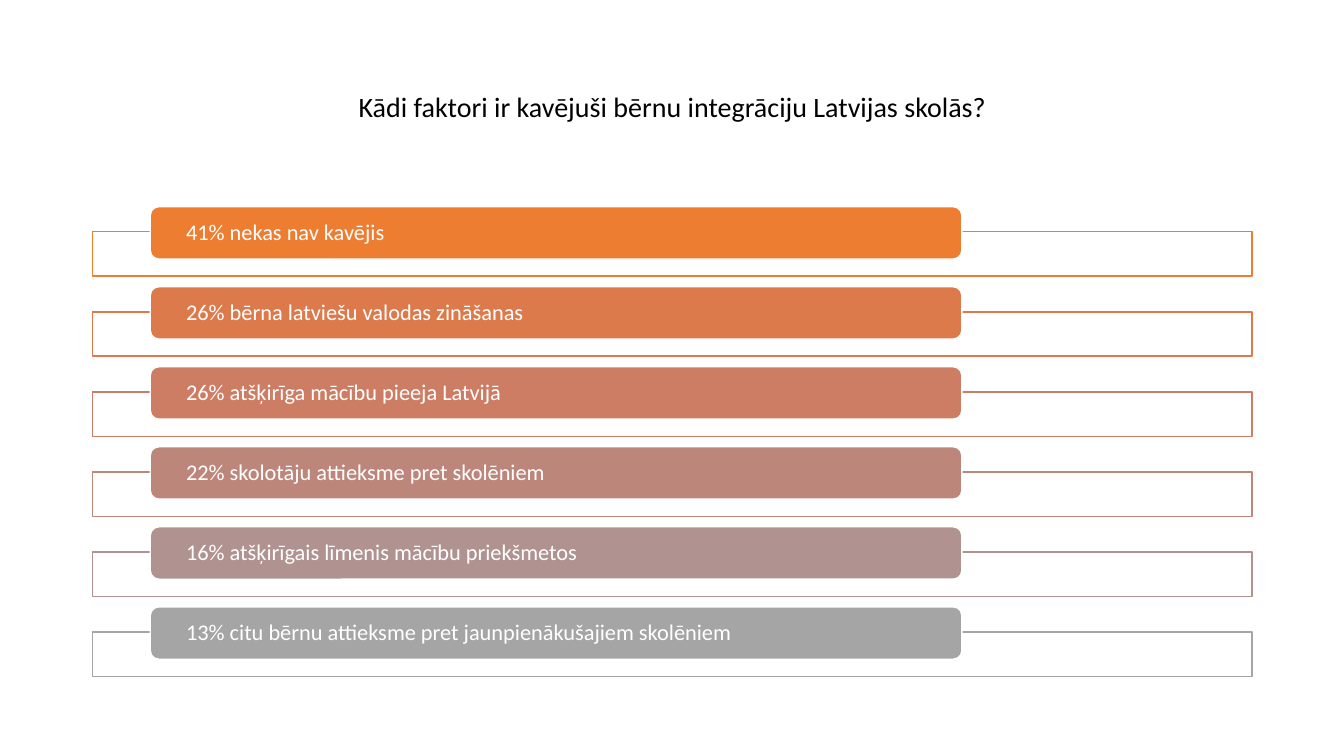
import pptx
import pptx.util
import pptx.dml.color
import pptx.enum.shapes
import pptx.enum.text
from pptx.util import Inches, Pt

COLORS = {
    "white": "FFFFFF",
    "black": "000000",
    "orange": "ED7D31",
    "copper": "DC7A4B",
    "terracotta": "CC7D64",
    "clay": "BD867B",
    "mauve": "B09391",
    "gray": "A5A5A5",
}
FACTORS = [
    ("41% nekas nav kavējis", "orange"),
    ("26% bērna latviešu valodas zināšanas", "copper"),
    ("26% atšķirīga mācību pieeja Latvijā", "terracotta"),
    ("22% skolotāju attieksme pret skolēniem", "clay"),
    ("16% atšķirīgais līmenis mācību priekšmetos", "mauve"),
    ("13% citu bērnu attieksme pret jaunpienākušajiem skolēniem", "gray"),
]
SHAPES = pptx.enum.shapes.MSO_SHAPE
ALIGN = pptx.enum.text.PP_ALIGN
LEFT, WIDTH = 0.92, 11.5
FIRST_TOP, LAST_TOP = 2.05, 6.02
FRAME_OFFSET = 0.25


def rgb(name):
    return pptx.dml.color.RGBColor.from_string(COLORS[name])


def write(sp, text, size, color, align, side, bottom=0):
    tf = sp.text_frame
    tf.word_wrap = True
    tf.vertical_anchor = pptx.enum.text.MSO_ANCHOR.MIDDLE
    tf.margin_left = tf.margin_right = Inches(side)
    tf.margin_top = 0
    tf.margin_bottom = Inches(bottom)
    p = tf.paragraphs[0]
    p.text = text
    p.alignment = align
    p.line_spacing = 0.9
    p.font.name = "Calibri"
    p.font.size = Pt(size)
    p.font.color.rgb = rgb(color)


def add_title(s, text):
    sp = s.shapes.add_textbox(Inches(LEFT), Inches(0.61), Inches(WIDTH), Inches(1.24))
    write(sp, text, 20, "black", ALIGN.CENTER, 0.1, 0.3)


def add_box(s, kind, left, top, width, height, fill, line):
    sp = s.shapes.add_shape(kind, Inches(left), Inches(top), Inches(width), Inches(height))
    sp.shadow.inherit = False
    sp.fill.solid()
    sp.fill.fore_color.rgb = rgb(fill)
    sp.line.color.rgb = rgb(line)
    sp.line.width = Pt(1)
    return sp


def add_factor(s, top, text, color):
    add_box(s, SHAPES.RECTANGLE, LEFT, top + FRAME_OFFSET, WIDTH, 0.44, "white", color)
    bar = add_box(s, SHAPES.ROUNDED_RECTANGLE, 1.49, top, 8.05, 0.52, color, "white")
    write(bar, text, 16, "white", ALIGN.LEFT, 0.33)


def main():
    prs = pptx.Presentation()
    prs.slide_width = Inches(13.33)
    prs.slide_height = Inches(7.5)
    s = prs.slides.add_slide(prs.slide_layouts[6])
    add_title(s, "Kādi faktori ir kavējuši bērnu integrāciju Latvijas skolās?")
    pitch = (LAST_TOP - FIRST_TOP) / (len(FACTORS) - 1)
    for i, (text, color) in enumerate(FACTORS):
        add_factor(s, FIRST_TOP + i * pitch, text, color)
    prs.save("out.pptx")


if __name__ == "__main__":
    main()
